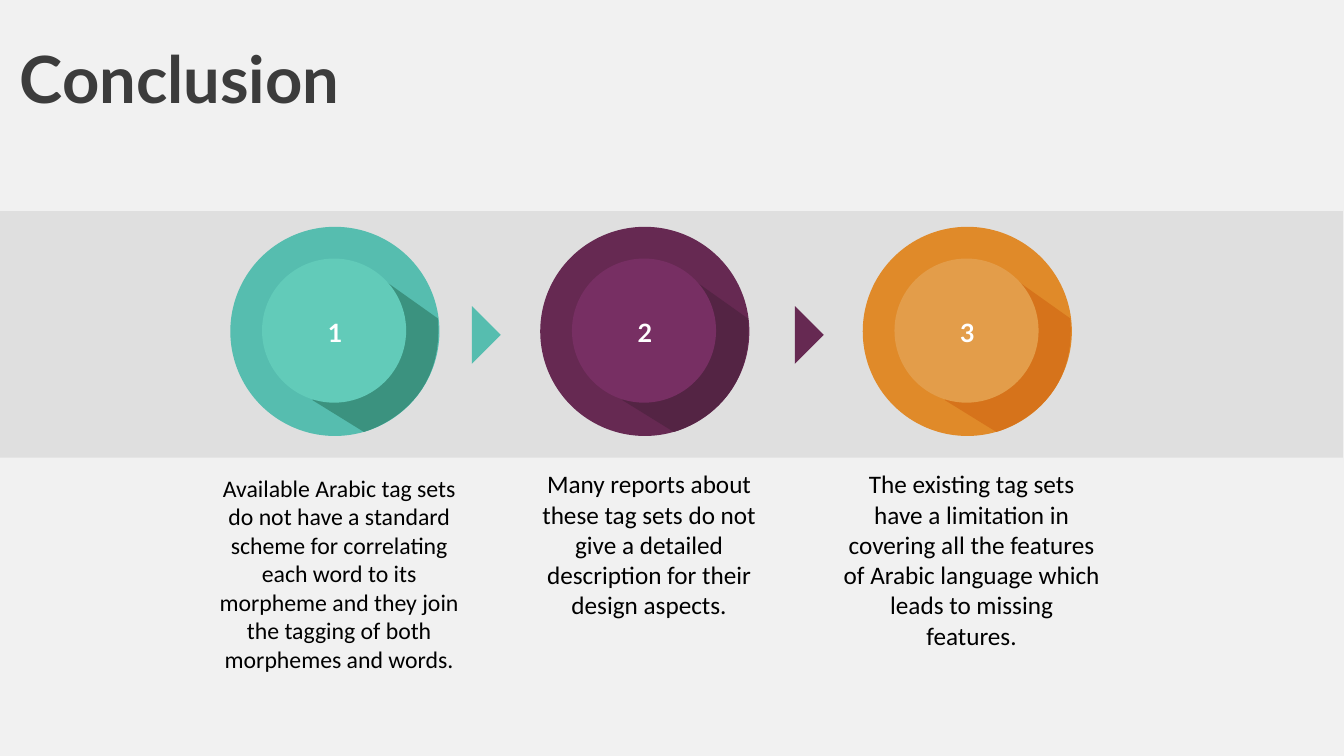
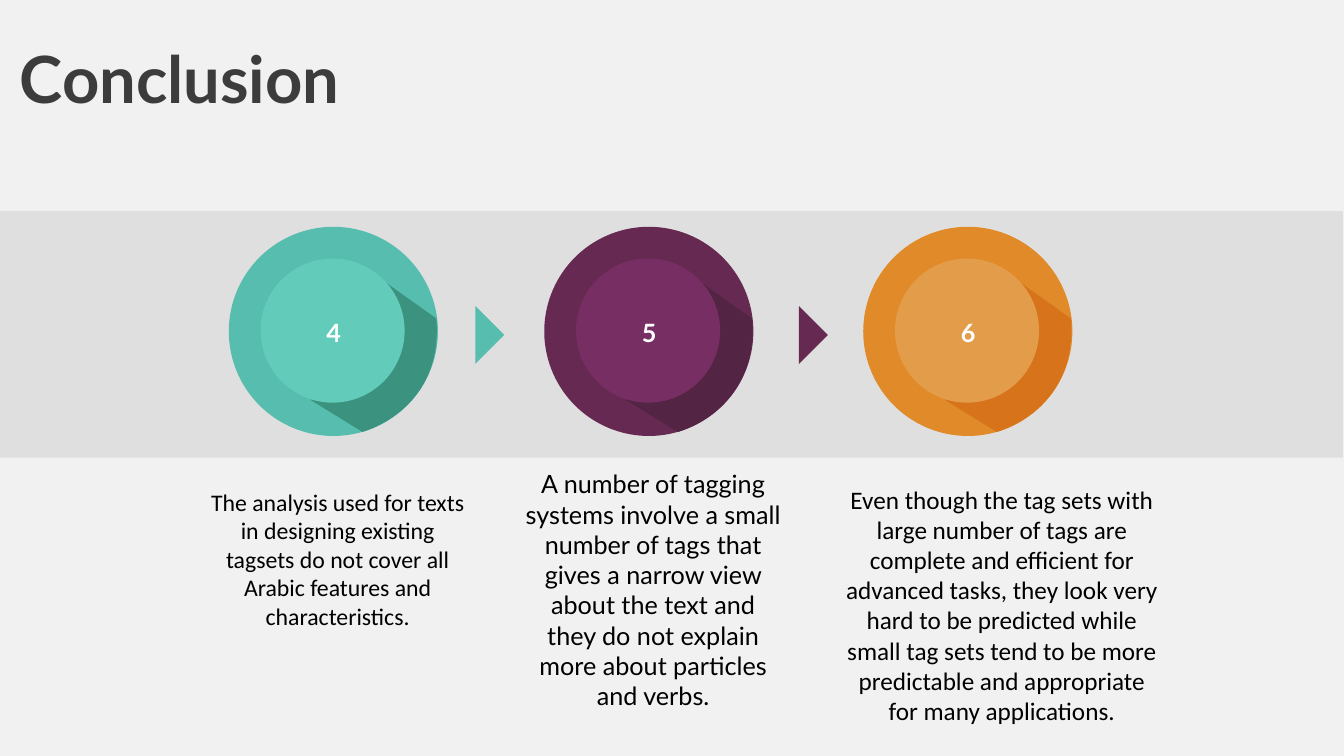
from dataclasses import dataclass

from pptx import Presentation
from pptx.dml.color import RGBColor
from pptx.enum.shapes import MSO_SHAPE
from pptx.enum.text import MSO_ANCHOR, MSO_AUTO_SIZE, PP_ALIGN
from pptx.util import Inches, Pt

RECTANGLE, OVAL, TRIANGLE = MSO_SHAPE.RECTANGLE, MSO_SHAPE.OVAL, MSO_SHAPE.RIGHT_TRIANGLE
LEFT, CENTER = PP_ALIGN.LEFT, PP_ALIGN.CENTER
TOP, MIDDLE = MSO_ANCHOR.TOP, MSO_ANCHOR.MIDDLE
NO_AUTOFIT = MSO_AUTO_SIZE.NONE

COLORS = {
    "background": "F1F1F1", "band": "DFDFDF", "title": "3C3C3C",
    "caption": "000000", "number": "FFFFFF",
}
DISC_COLORS = [
    {"rim": "56BDAF", "shade": "3B927F", "face": "62CBB9"},
    {"rim": "662952", "shade": "542444", "face": "772F63"},
    {"rim": "E08A29", "shade": "D6731B", "face": "E39D4A"},
]
TITLE_LAYOUT = 5
DISC_TOP, DISC_SIZE, FACE_INSET = 4.5, 4.15, 0.63
FACE_SIZE = 2.86
ARROW_TOP, ARROW_SIZE = 6.24, 0.81
SHADE_START, SHADE_END = (1.63, 3.44), (3.12, 1.11)
SHADE_CURVE = [(2.65, 4.07), (2.65, 4.07), (4.27, 3.65), (4.12, 1.82)]
CURVE_STEPS = 24


@dataclass
class Point:
    """A numbered conclusion and the place of its disc and caption."""
    text: str
    disc_left: float
    caption_top: float
    caption_width: float = 5.12
    line_count: int = 5
    size: int = 36
    font: str = "Calibri"


SLIDES = [
    {
        "arrows": [8.96, 15.37],
        "points": [
            Point("Available Arabic tag sets do not have a standard scheme for correlating "
                  "each word to its morpheme and they join the tagging of both morphemes "
                  "and words.", 4.57, 9.39, line_count=7, size=34),
            Point("Many reports about these tag sets do not give a detailed description "
                  "for their design aspects.", 10.72, 9.3),
            Point("The existing tag sets have a limitation in covering all the features of "
                  "Arabic language which leads to missing features.",
                  17.12, 9.3, line_count=6),
        ],
    },
    {
        "arrows": [9.03, 15.45],
        "points": [
            Point("The analysis used for texts in designing existing tagsets do not cover "
                  "all Arabic features and characteristics.", 4.54, 9.67, size=34),
            Point("A number of tagging systems involve a small number of tags that gives a "
                  "narrow view about the text and they do not explain more about particles "
                  "and verbs.", 10.8, 9.3, line_count=8, font="Lato"),
            Point("Even though the tag sets with large number of tags are complete and "
                  "efficient for advanced tasks, they look very hard to be predicted while "
                  "small tag sets tend to be more predictable and appropriate for many "
                  "applications.", 17.13, 9.6, caption_width=6.3, line_count=8),
        ],
    },
]


def paint(shape, color):
    """Give a shape a flat fill without line or shadow."""
    shape.shadow.inherit = False
    shape.fill.solid()
    shape.fill.fore_color.rgb = RGBColor.from_string(color)
    shape.line.fill.background()


def add_flat_shape(shapes, kind, left, top, width, height, color):
    """Add a flat preset shape."""
    shape = shapes.add_shape(kind, Inches(left), Inches(top), Inches(width), Inches(height))
    paint(shape, color)
    return shape


def write(shape, text, size, font, color, bold=False, align=CENTER, anchor=MIDDLE, wrap=True):
    """Write one paragraph into a shape without margins."""
    frame = shape.text_frame
    frame.margin_left = frame.margin_right = frame.margin_top = frame.margin_bottom = 0
    frame.auto_size = NO_AUTOFIT
    frame.word_wrap = wrap
    frame.vertical_anchor = anchor
    frame.text = text
    paragraph = frame.paragraphs[0]
    paragraph.alignment = align
    paragraph.font.size = Pt(size)
    paragraph.font.name = font
    paragraph.font.bold = bold
    paragraph.font.color.rgb = RGBColor.from_string(color)


def add_text(shapes, left, top, width, height, *content, **style):
    """Add a text box holding one paragraph."""
    box = shapes.add_textbox(Inches(left), Inches(top), Inches(width), Inches(height))
    write(box, *content, **style)


def curve_points(controls):
    """Return points along a cubic curve, both ends included."""
    first, second, third, fourth = controls
    points = []
    for step in range(CURVE_STEPS + 1):
        t = step / CURVE_STEPS
        u = 1 - t
        points.append(tuple(
            u ** 3 * a + 3 * u * u * t * b + 3 * u * t * t * c + t ** 3 * d
            for a, b, c, d in zip(first, second, third, fourth)))
    return points


def add_shade(shapes, left, top, color):
    """Add the long shade cast by the face of a disc."""
    outline = [(Inches(left + x), Inches(top + y))
               for x, y in [SHADE_START, *curve_points(SHADE_CURVE), SHADE_END]]
    builder = shapes.build_freeform(*outline[0])
    builder.add_line_segments(outline[1:], close=True)
    paint(builder.convert_to_shape(), color)


def add_disc(shapes, left, top, number, colors):
    """Add a numbered disc at the given corner."""
    add_flat_shape(shapes, OVAL, left, top, DISC_SIZE, DISC_SIZE, colors["rim"])
    add_shade(shapes, left, top, colors["shade"])
    add_flat_shape(shapes, OVAL, left + FACE_INSET, top + FACE_INSET,
                   FACE_SIZE, FACE_SIZE, colors["face"])
    add_text(shapes, left + 1.94, top + 1.79, 0.28, 0.61, str(number), 36, "Lato",
             COLORS["number"], bold=True, wrap=False)


def add_point(slide, point, number, colors):
    """Add a group of one caption and its disc."""
    shapes = slide.shapes.add_group_shape().shapes
    height = point.line_count * point.size * 1.2 / 72
    add_text(shapes, point.disc_left - 0.4, point.caption_top, point.caption_width, height,
             point.text, point.size, point.font, COLORS["caption"], anchor=TOP)
    add_disc(shapes, point.disc_left, DISC_TOP, number, colors)


def add_title(slide, text):
    """Place and format the slide title."""
    title = slide.shapes.title
    title.left, title.top = Inches(0.39), Inches(0.72)
    title.width, title.height = Inches(15.75), Inches(1.65)
    write(title, text, 93, "Lato", COLORS["title"], bold=True, align=LEFT)


def add_conclusion_slide(presentation, content, first_number):
    """Add a slide of numbered conclusions on a band."""
    slide = presentation.slides.add_slide(presentation.slide_layouts[TITLE_LAYOUT])
    add_title(slide, "Conclusion")
    add_flat_shape(slide.shapes, RECTANGLE, 0, 4.19, 26.65, 4.89, COLORS["band"])
    for offset, (point, colors) in enumerate(zip(content["points"], DISC_COLORS)):
        add_point(slide, point, first_number + offset, colors)
    for left, colors in zip(content["arrows"], DISC_COLORS):
        arrow = add_flat_shape(slide.shapes, TRIANGLE, left, ARROW_TOP,
                               ARROW_SIZE, ARROW_SIZE, colors["rim"])
        arrow.rotation = 225


def main():
    """Build and save the presentation."""
    presentation = Presentation()
    presentation.slide_width, presentation.slide_height = Inches(26.67), Inches(15)
    background = presentation.slide_master.background.fill
    background.solid()
    background.fore_color.rgb = RGBColor.from_string(COLORS["background"])
    first_number = 1
    for content in SLIDES:
        add_conclusion_slide(presentation, content, first_number)
        first_number += len(content["points"])
    presentation.save("out.pptx")


if __name__ == "__main__":
    main()
